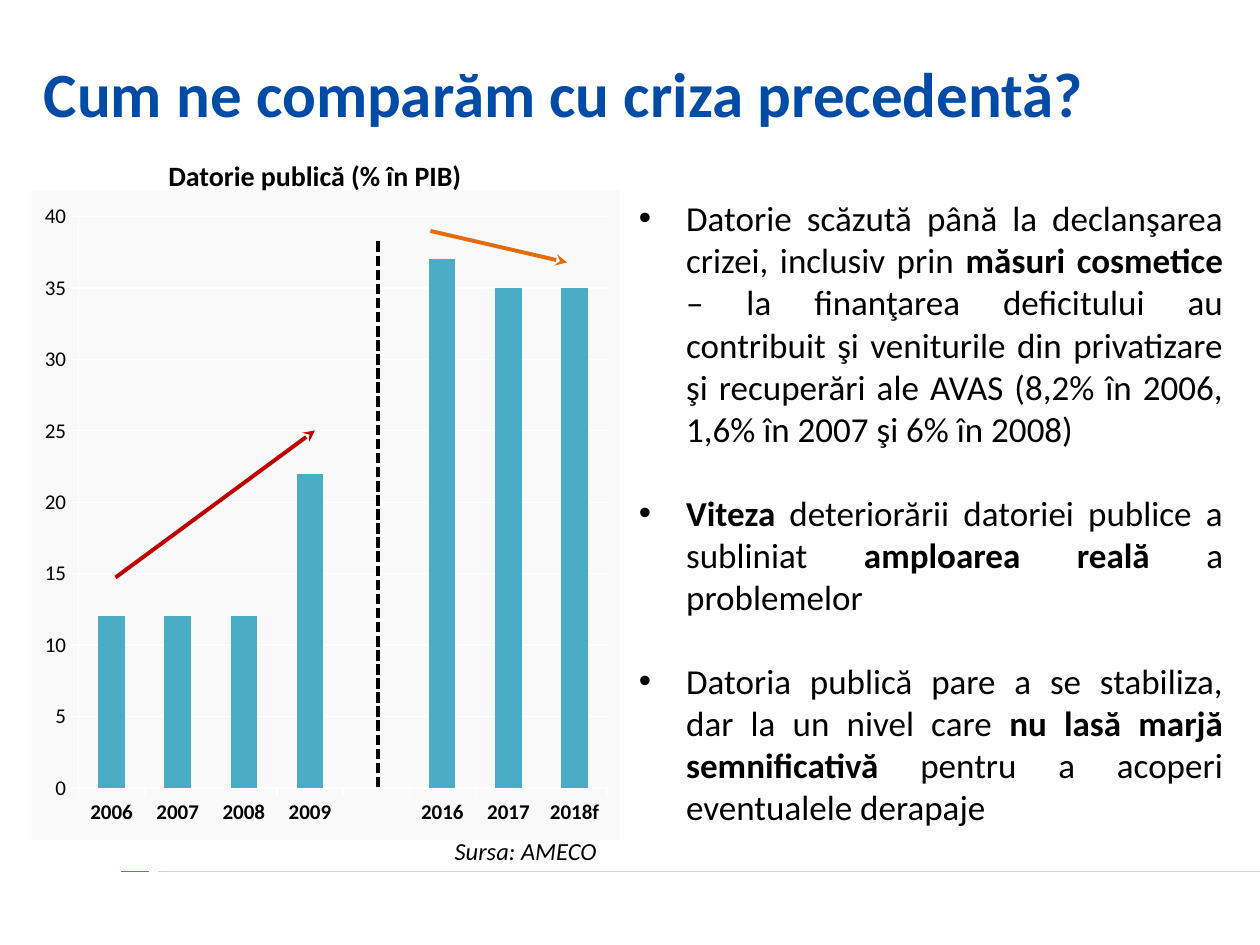
"""Build a slide comparing public debt before and after the crisis."""
from dataclasses import dataclass

from lxml import etree
from pptx import Presentation, util as u
from pptx.chart import data as chart_data
from pptx.dml.color import RGBColor
from pptx.enum import chart as charts, dml, shapes, text
from pptx.oxml import parse_xml, ns


@dataclass(frozen=True)
class Theme:
    font: str = "Calibri"
    ink: str = "000000"
    title: str = "004BA6"
    bar: str = "4BACC6"
    panel: str = "F9F9F9"
    grid: str = "FFFFFF"
    rise: str = "C00000"
    fall: str = "E46C0A"
    rule: str = "D0D2D3"
    accent: str = "4B7EBC"
    title_size: int = 36
    body_size: int = 20
    heading_size: int = 16
    source_size: int = 14
    axis_size: int = 12


theme = Theme()
align = text.PP_ALIGN
deck = Presentation()
deck.slide_width, deck.slide_height = u.Pt(720), u.Pt(540)
page = deck.slides.add_slide(deck.slide_layouts[6])


def write(*paragraphs, at, size, color=theme.ink, bold=False, italic=False,
          alignment=align.LEFT, anchor=text.MSO_ANCHOR.TOP, spacing=None,
          gap=0, bullet_indent=0):
    """Write paragraphs in a text box; parts between asterisks turn bold."""
    box = page.shapes.add_textbox(*map(u.Pt, at))
    frame = box.text_frame
    frame.word_wrap = True
    frame.vertical_anchor = anchor
    for index, content in enumerate(paragraphs):
        para = frame.paragraphs[0] if index == 0 else frame.add_paragraph()
        para.alignment = alignment
        if spacing:
            para.line_spacing = u.Pt(spacing)
        if index:
            para.space_before = u.Pt(gap)
        if bullet_indent:
            props = para._p.get_or_add_pPr()
            props.set("marL", str(u.Pt(bullet_indent)))
            props.set("indent", str(-u.Pt(bullet_indent)))
            etree.SubElement(props, ns.qn("a:buFont"), typeface="Arial")
            etree.SubElement(props, ns.qn("a:buChar"), char="•")
        for part, words in enumerate(content.split("*")):
            if words:
                span = para.add_run()
                span.text = words
                span.font.name = theme.font
                span.font.size = u.Pt(size)
                span.font.bold = bold or part % 2 == 1
                span.font.italic = italic
                span.font.color.rgb = RGBColor.from_string(color)


def draw_line(*points, color, width, dash=None, arrow=False):
    """Draw a straight line, with an optional dash or arrowhead."""
    line = page.shapes.add_connector(shapes.MSO_CONNECTOR.STRAIGHT, *map(u.Pt, points))
    line.line.color.rgb = RGBColor.from_string(color)
    line.line.width = u.Pt(width)
    if dash:
        line.line.dash_style = dash
    if arrow:
        etree.SubElement(line.line._get_or_add_ln(), ns.qn("a:tailEnd"), type="stealth")
    etree.SubElement(line._element.spPr, ns.qn("a:effectLst"))


draw_line(720, 498, 90, 498, color=theme.rule, width=0.75)
draw_line(85, 498, 69, 498, color=theme.accent, width=0.75)

write("Datorie publică (% în PIB)", at=(18, 87, 324, 27),
      size=theme.heading_size, bold=True, alignment=align.CENTER)
write("Sursa: AMECO", at=(240, 474, 108, 24),
      size=theme.source_size, italic=True, alignment=align.RIGHT)
write("Cum ne comparăm cu criza precedentă?", at=(18, 0, 684, 90),
      size=theme.title_size, color=theme.title, bold=True,
      anchor=text.MSO_ANCHOR.MIDDLE, spacing=59)
write(
    "Datorie scăzută până la declanşarea crizei, inclusiv prin *măsuri cosmetice *"
    "– la finanţarea deficitului au contribuit şi veniturile din privatizare şi "
    "recuperări ale AVAS (8,2% în 2006, 1,6% în 2007 şi 6% în 2008)",
    "*Viteza* deteriorării datoriei publice a subliniat *amploarea reală *a problemelor",
    "Datoria publică pare a se stabiliza, dar la un nivel care "
    "*nu lasă marjă semnificativă* pentru a acoperi eventualele derapaje",
    at=(358, 109, 348, 419), size=theme.body_size, alignment=align.JUSTIFY,
    gap=24, bullet_indent=27)

debt = chart_data.CategoryChartData()
debt.categories = ["2006", "2007", "2008", "2009", "", "2016", "2017", "2018f"]
debt.add_series("Datorie publică", [12, 12, 12, 22, None, 37, 35, 35])
chart = page.shapes.add_chart(charts.XL_CHART_TYPE.COLUMN_CLUSTERED,
                              *map(u.Pt, (18, 109, 336, 371)), debt).chart
chart.has_legend = False
chart.has_title = False
chart.font.name = theme.font
chart.font.size = u.Pt(theme.axis_size)
chart.font.color.rgb = RGBColor.from_string(theme.ink)

plot = chart.plots[0]
plot.gap_width = 150
plot.vary_by_categories = False
bars = plot.series[0].format.fill
bars.solid()
bars.fore_color.rgb = RGBColor.from_string(theme.bar)

years, values = chart.category_axis, chart.value_axis
years.tick_labels.font.bold = True
values.minimum_scale, values.maximum_scale, values.major_unit = 0, 40, 5
values.has_major_gridlines = True
for part in (years, values, values.major_gridlines):
    part.format.line.color.rgb = RGBColor.from_string(theme.grid)
    part.format.line.width = u.Pt(0.75)
for axis in (years, values):
    axis.major_tick_mark = charts.XL_TICK_MARK.OUTSIDE

panel = (f'<c:spPr {ns.nsdecls("c", "a")}><a:solidFill><a:srgbClr val="{theme.panel}"/>'
         '</a:solidFill><a:ln><a:noFill/></a:ln></c:spPr>')
chart_part = chart._chartSpace.find(ns.qn("c:chart"))
chart_part.addnext(parse_xml(panel))
plot_area = chart_part.find(ns.qn("c:plotArea"))
plot_area.append(parse_xml(panel))
for layout in plot_area.findall(ns.qn("c:layout")):
    plot_area.remove(layout)
plot_area.insert(0, parse_xml(
    f'<c:layout {ns.nsdecls("c")}><c:manualLayout><c:layoutTarget val="inner"/>'
    '<c:xMode val="edge"/><c:yMode val="edge"/><c:x val="0.08"/><c:y val="0.04"/>'
    '<c:w val="0.9"/><c:h val="0.88"/></c:manualLayout></c:layout>'))

draw_line(216, 138, 216, 450, color=theme.ink, width=2, dash=dml.MSO_LINE.SQUARE_DOT)
draw_line(66, 330, 180, 246, color=theme.rise, width=2.25, arrow=True)
draw_line(246, 132, 324, 150, color=theme.fall, width=2.25, arrow=True)

deck.save("out.pptx")
